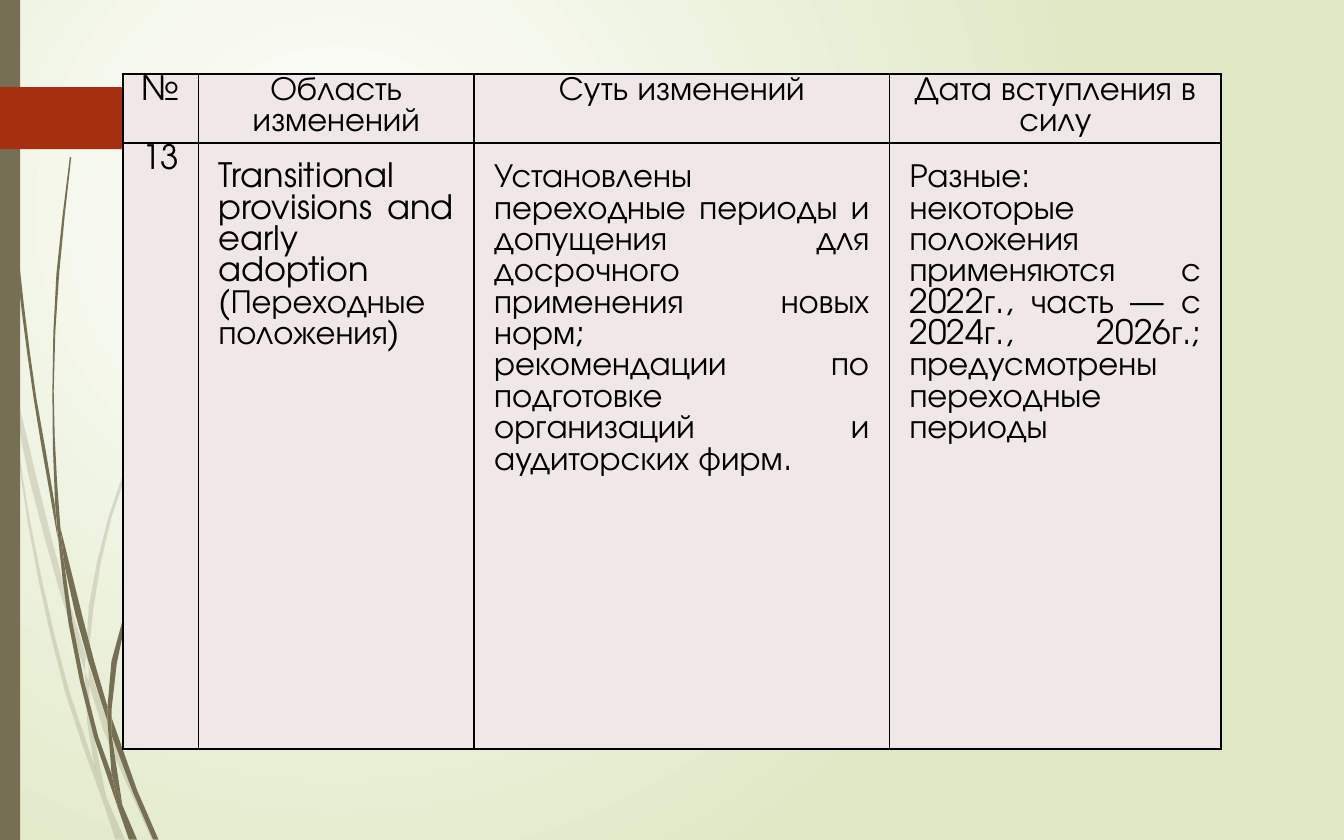
"""Build a slide with a table of changes over a light green background with grass blades."""
from lxml import etree
from pptx import Presentation
from pptx.dml.color import RGBColor
from pptx.enum.shapes import MSO_SHAPE
from pptx.enum.text import PP_ALIGN
from pptx.oxml.ns import qn
from pptx.util import Cm, Pt

RECTANGLE, PENTAGON = MSO_SHAPE.RECTANGLE, MSO_SHAPE.PENTAGON
CENTER, JUSTIFY = PP_ALIGN.CENTER, PP_ALIGN.JUSTIFY
WHITE = RGBColor(0xFF, 0xFF, 0xFF)
PALE_GREEN = RGBColor(0xDF, 0xE8, 0xC4)
OLIVE = RGBColor(0x76, 0x6F, 0x54)
RUST = RGBColor(0xA5, 0x30, 0x10)
CELL_PINK = RGBColor(0xF0, 0xE8, 0xE7)
BLACK = RGBColor(0, 0, 0)
FONT = "TeX Gyre Adventor"

HEADER = ["№", "Область изменений", "Суть изменений", "Дата вступления в силу"]
CHANGE = [
    "13",
    "Transitional provisions and early adoption (Переходные положения)",
    "Установлены переходные периоды и допущения для досрочного применения новых норм;\n"
    "рекомендации по подготовке организаций и аудиторских фирм.",
    "Разные: некоторые положения применяются с 2022г., часть — с 2024г., 2026г.; "
    "предусмотрены переходные периоды",
]
COLUMN_WIDTHS = [1.42, 5.21, 7.85, 6.27]
ROW_HEIGHTS = [1.3, 11.46]

BLADE_UNIT = Cm(2.54) / 100
FAINT_BLADES = [
    [(8, 292), (6, 268), (0, 235), (0, 249), (8, 287)],
    [(43, 435), (63, 499), (64, 488), (47, 433), (11, 288), (13, 313)],
    [(66, 496), (66, 509), (92, 578), (113, 625), (116, 625), (95, 576)],
    [(70, 569), (52, 516), (23, 391), (8, 292), (21, 391), (49, 517), (76, 595)],
    [(63, 499), (65, 538), (70, 569), (79, 593), (68, 538), (66, 507)],
    [(66, 486), (83, 385), (120, 291), (118, 290), (81, 384), (64, 486), (66, 496)],
    [(70, 569), (76, 595), (86, 625), (93, 625), (79, 593)],
]
SOLID_BLADES = [
    [(5, 91), (12, 194), (25, 296), (43, 401), (41, 377), (27, 296), (14, 193),
     (6, 91), (3, 0), (2, 0)],
    [(66, 493), (80, 537), (80, 526), (70, 492), (45, 393), (48, 421)],
    [(83, 534), (83, 547), (99, 590), (114, 625), (118, 625), (102, 588)],
    [(83, 576), (73, 548), (54, 464), (48, 421), (43, 398), (51, 464), (70, 549),
     (88, 602)],
    [(45, 393), (40, 291), (44, 204), (53, 117), (52, 117), (42, 204), (39, 291),
     (41, 374), (43, 398), (48, 421)],
    [(83, 528), (94, 460), (119, 397), (117, 395), (92, 459), (80, 526), (83, 534)],
    [(80, 526), (80, 537), (83, 576), (91, 599), (83, 547), (83, 534)],
    [(83, 576), (88, 602), (96, 625), (102, 625), (91, 599)],
]
STEP_LENGTH = Cm(1)


def paint(shape, color):
    shape.shadow.inherit = False
    shape.fill.solid()
    shape.fill.fore_color.rgb = color
    shape.line.fill.background()


def smooth_outline(corners):
    points = [complex(x, y) * BLADE_UNIT for x, y in corners]
    count = len(points)
    edges = [points[(i + 1) % count] - points[i] for i in range(count)]
    units = [edge / abs(edge) for edge in edges]
    tangents = []
    for before, after in zip([units[-1]] + units[:-1], units):
        is_tip = (before * after.conjugate()).real < 0.5
        tangents.append(0 if is_tip else (before + after) / abs(before + after))
    outline = []
    for i, start in enumerate(points):
        following = (i + 1) % count
        end, reach = points[following], abs(edges[i]) / 3
        leave = start + (tangents[i] or units[i]) * reach
        arrive = end - (tangents[following] or units[i]) * reach
        steps = max(1, round(abs(edges[i]) / STEP_LENGTH))
        for step in range(steps):
            t = step / steps
            s = 1 - t
            spot = s**3 * start + 3 * s * s * t * leave + 3 * s * t * t * arrive + t**3 * end
            outline.append((spot.real, spot.imag))
    return outline


def draw_blade(slide, corners, opacity):
    outline = smooth_outline(corners)
    builder = slide.shapes.build_freeform(*outline[0], scale=1.0)
    builder.add_line_segments(outline[1:], close=True)
    blade = builder.convert_to_shape()
    paint(blade, OLIVE)
    if opacity < 100:
        color = blade.element.spPr.find(qn("a:solidFill")).find(qn("a:srgbClr"))
        etree.SubElement(color, qn("a:alpha"), val=str(opacity * 1000))


def draw_background(slide):
    fill = slide.background.fill
    fill.gradient()
    for stop, color in zip(fill.gradient_stops, (WHITE, PALE_GREEN)):
        stop.color.rgb = color
    gradient = slide.element.find(".//" + qn("a:gradFill"))
    gradient.remove(gradient.find(qn("a:lin")))
    circle = etree.SubElement(gradient, qn("a:path"), path="circle")
    etree.SubElement(circle, qn("a:fillToRect"), l="50000", t="50000", r="100000", b="100000")


def add_borders(cell):
    properties = cell._tc.get_or_add_tcPr()
    for position, side in enumerate(("a:lnL", "a:lnR", "a:lnT", "a:lnB")):
        border = etree.Element(qn(side), w=str(Pt(1)))
        solid = etree.SubElement(border, qn("a:solidFill"))
        etree.SubElement(solid, qn("a:srgbClr"), val=str(BLACK))
        properties.insert(position, border)


def fill_cell(cell, text, is_body):
    cell.fill.solid()
    cell.fill.fore_color.rgb = CELL_PINK
    margin = Cm(0.38 if is_body else 0.03)
    cell.margin_left = cell.margin_right = cell.margin_top = margin
    cell.margin_bottom = margin if is_body else 0
    cell.text = text
    for paragraph in cell.text_frame.paragraphs:
        paragraph.alignment = JUSTIFY if is_body else CENTER
        paragraph.line_spacing = Pt(16.8)
        paragraph.font.name = FONT
        paragraph.font.size = Pt(18)
        paragraph.font.bold = False
        paragraph.font.color.rgb = BLACK
    add_borders(cell)


def draw_table(slide):
    frame = slide.shapes.add_table(
        len(ROW_HEIGHTS), len(COLUMN_WIDTHS), Cm(2.33), Cm(1.4),
        Cm(sum(COLUMN_WIDTHS)), Cm(sum(ROW_HEIGHTS)))
    changes = frame.table
    changes.first_row = changes.horz_banding = False
    for column, width in zip(changes.columns, COLUMN_WIDTHS):
        column.width = Cm(width)
    for r, (height, texts) in enumerate(zip(ROW_HEIGHTS, (HEADER, CHANGE))):
        changes.rows[r].height = Cm(height)
        for c, text in enumerate(texts):
            fill_cell(changes.cell(r, c), text, r > 0 and c > 0)


def main():
    deck = Presentation()
    deck.slide_width, deck.slide_height = Cm(25.4), Cm(15.88)
    slide = deck.slides.add_slide(deck.slide_layouts[6])
    draw_background(slide)
    for blades, opacity in ((FAINT_BLADES, 20), (SOLID_BLADES, 100)):
        for corners in blades:
            draw_blade(slide, corners, opacity)
    paint(slide.shapes.add_shape(RECTANGLE, 0, 0, Cm(0.38), deck.slide_height), OLIVE)
    pointer = slide.shapes.add_shape(PENTAGON, 0, Cm(1.65), Cm(3.3), Cm(1.17))
    pointer.adjustments[0] = 0.43
    paint(pointer, RUST)
    draw_table(slide)
    deck.save("out.pptx")


if __name__ == "__main__":
    main()
